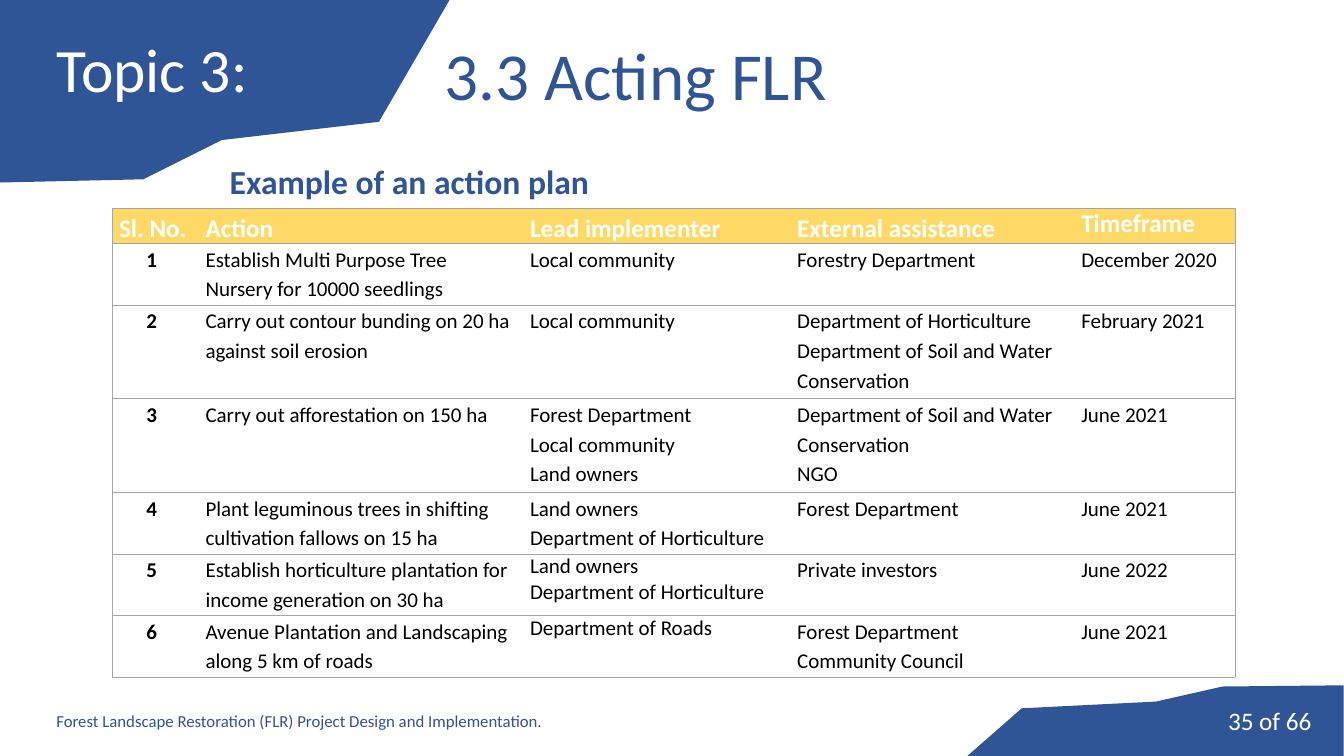
from dataclasses import dataclass

from lxml.etree import SubElement
from pptx import Presentation
from pptx.dml.color import RGBColor
from pptx.enum.text import MSO_ANCHOR, MSO_AUTO_SIZE, PP_ALIGN
from pptx.oxml.ns import qn
from pptx.util import Cm, Pt


@dataclass(frozen=True)
class Theme:
    font: str = "Calibri"
    blue: str = "2F5597"
    yellow: str = "FFD966"
    white: str = "FFFFFF"
    black: str = "000000"
    rule: str = "A5A5A5"
    heading: int = 48
    topic: int = 44
    subtitle: int = 24
    label: int = 18
    body: int = 15
    footer: int = 12


THEME = Theme()
PLAIN_GRID_STYLE = "{2D5ABB26-0587-4C30-8999-92F81FD0307C}"

COLUMN_WIDTHS = (2.01, 8.18, 6.73, 7.16, 4.22)
ROW_HEIGHTS = (0.76, 1.55, 2.36, 2.36, 1.55, 1.55, 1.55)
SINGLE_SPACED = {(0, 4), (5, 2), (6, 2)}
ACTION_PLAN = (
    ("Sl. No.", "Action", "Lead implementer", "External assistance", "Timeframe"),
    ("1", "Establish Multi Purpose Tree Nursery for 10000 seedlings",
     "Local community", "Forestry Department", "December 2020"),
    ("2", "Carry out contour bunding on 20 ha against soil erosion",
     "Local community",
     "Department of Horticulture\nDepartment of Soil and Water Conservation",
     "February 2021"),
    ("3", "Carry out afforestation on 150 ha",
     "Forest Department\nLocal community\nLand owners",
     "Department of Soil and Water Conservation\nNGO", "June 2021"),
    ("4", "Plant leguminous trees in shifting cultivation fallows on 15 ha",
     "Land owners\nDepartment of Horticulture", "Forest Department", "June 2021"),
    ("5", "Establish horticulture plantation for income generation on 30 ha",
     "Land owners\nDepartment of Horticulture", "Private investors", "June 2022"),
    ("6", "Avenue Plantation and Landscaping along 5 km of roads",
     "Department of Roads", "Forest Department\nCommunity Council", "June 2021"),
)


def write(frame, text, *, size, color, bold=False, align=PP_ALIGN.LEFT,
          spacing=1.0, indent=0):
    """Fill a text frame, one paragraph per line of text."""
    frame.word_wrap = True
    for index, line in enumerate(text.split("\n")):
        paragraph = frame.add_paragraph() if index else frame.paragraphs[0]
        paragraph.alignment = align
        paragraph.line_spacing = spacing
        if indent:
            paragraph._p.get_or_add_pPr().set("marL", str(Cm(indent)))
        run = paragraph.add_run()
        run.text = line
        run.font.name = THEME.font
        run.font.size = Pt(size)
        run.font.bold = bold
        run.font.color.rgb = RGBColor.from_string(color)


def add_label(slide, box, text, anchor=MSO_ANCHOR.TOP, **text_format):
    frame = slide.shapes.add_textbox(*map(Cm, box)).text_frame
    frame.vertical_anchor = anchor
    write(frame, text, **text_format)


def add_banner(slide, left, top, outline):
    """Draw a blue polygon; outline points are relative to left and top."""
    points = [(Cm(left + x), Cm(top + y)) for x, y in outline]
    builder = slide.shapes.build_freeform(*points[0])
    builder.add_line_segments(points[1:], close=True)
    banner = builder.convert_to_shape()
    banner.shadow.inherit = False
    banner.fill.solid()
    banner.fill.fore_color.rgb = RGBColor.from_string(THEME.blue)
    banner.line.fill.background()


def add_header(slide, left, top):
    add_banner(slide, left, top, [(0, 0), (11.33, 0), (9.55, 3.07),
                                  (5.59, 3.53), (3.61, 4.52), (0, 4.6)])
    # Topic, brought in front of the banner
    topic = slide.shapes.title
    slide.shapes._spTree.append(topic._element)
    topic.left, topic.top = Cm(left + 1.17), Cm(top)
    topic.width, topic.height = Cm(11.79), Cm(3.68)
    topic.text_frame.auto_size = MSO_AUTO_SIZE.NONE
    topic.text_frame.vertical_anchor = MSO_ANCHOR.MIDDLE
    write(topic.text_frame, "Topic 3:", size=THEME.topic, color=THEME.white,
          spacing=0.9)
    # Section heading and table caption
    add_label(slide, (left + 10.95, top + 0.71, 22.07, 2.31), "3.3 Acting FLR",
              size=THEME.heading, color=THEME.blue)
    add_label(slide, (left + 5.54, top + 3.94, 15.95, 1.27),
              "Example of an action plan",
              size=THEME.subtitle, color=THEME.blue, bold=True)


def add_borders(cell, sides):
    properties = cell._tc.get_or_add_tcPr()
    for side in sides:
        line = SubElement(properties, qn(f"a:ln{side}"), w=str(Pt(0.5)))
        fill = SubElement(line, qn("a:solidFill"))
        SubElement(fill, qn("a:srgbClr"), val=THEME.rule)


def format_cell(cell, text, row, column):
    header, number = row == 0, column == 0
    last = column == len(COLUMN_WIDTHS) - 1
    cell.margin_left = cell.margin_right = Cm(0.05)
    cell.margin_top = cell.margin_bottom = 0
    add_borders(cell, "L" * number + "R" * last + "TB")
    if header:
        cell.fill.solid()
        cell.fill.fore_color.rgb = RGBColor.from_string(THEME.yellow)
    else:
        cell.fill.background()
    centred = number and not header
    write(cell.text_frame, text,
          size=THEME.label if header else THEME.body,
          color=THEME.white if header else THEME.black,
          bold=header or number,
          align=PP_ALIGN.CENTER if centred else PP_ALIGN.LEFT,
          spacing=1.0 if (row, column) in SINGLE_SPACED else 1.15,
          indent=0 if centred else 0.13 if number else 0.3)


def add_action_plan(slide, left, top):
    frame = slide.shapes.add_table(
        len(ROW_HEIGHTS), len(COLUMN_WIDTHS), Cm(left), Cm(top),
        Cm(sum(COLUMN_WIDTHS)), Cm(sum(ROW_HEIGHTS)))
    plan = frame.table
    plan.horz_banding = False
    plan._tbl.tblPr.find(qn("a:tableStyleId")).text = PLAIN_GRID_STYLE
    for column, width in zip(plan.columns, COLUMN_WIDTHS):
        column.width = Cm(width)
    for row, height in zip(plan.rows, ROW_HEIGHTS):
        row.height = Cm(height)
    for row, entries in enumerate(ACTION_PLAN):
        for column, text in enumerate(entries):
            format_cell(plan.cell(row, column), text, row, column)


def add_footer(slide, left, top):
    add_banner(slide, left + 24.38, top, [(0, 1.78), (1.37, 0.58), (4.75, 0.41),
                                          (6.43, 0.03), (9.48, 0), (9.48, 1.78)])
    add_label(slide, (left + 1.17, top + 0.38, 20.32, 1.02),
              "Forest Landscape Restoration (FLR) Project Design and Implementation.",
              MSO_ANCHOR.MIDDLE, size=THEME.footer, color=THEME.blue)
    add_label(slide, (left + 29.79, top + 0.38, 3.51, 1.02), "35 of 66",
              MSO_ANCHOR.MIDDLE, size=THEME.label, color=THEME.white,
              align=PP_ALIGN.RIGHT)


def main():
    presentation = Presentation()
    presentation.slide_width, presentation.slide_height = Cm(33.87), Cm(19.05)
    slide = presentation.slides.add_slide(presentation.slide_layouts[5])
    add_header(slide, 0, 0)
    add_action_plan(slide, 2.82, 5.26)
    add_footer(slide, 0, 17.27)
    presentation.save("out.pptx")


if __name__ == "__main__":
    main()
